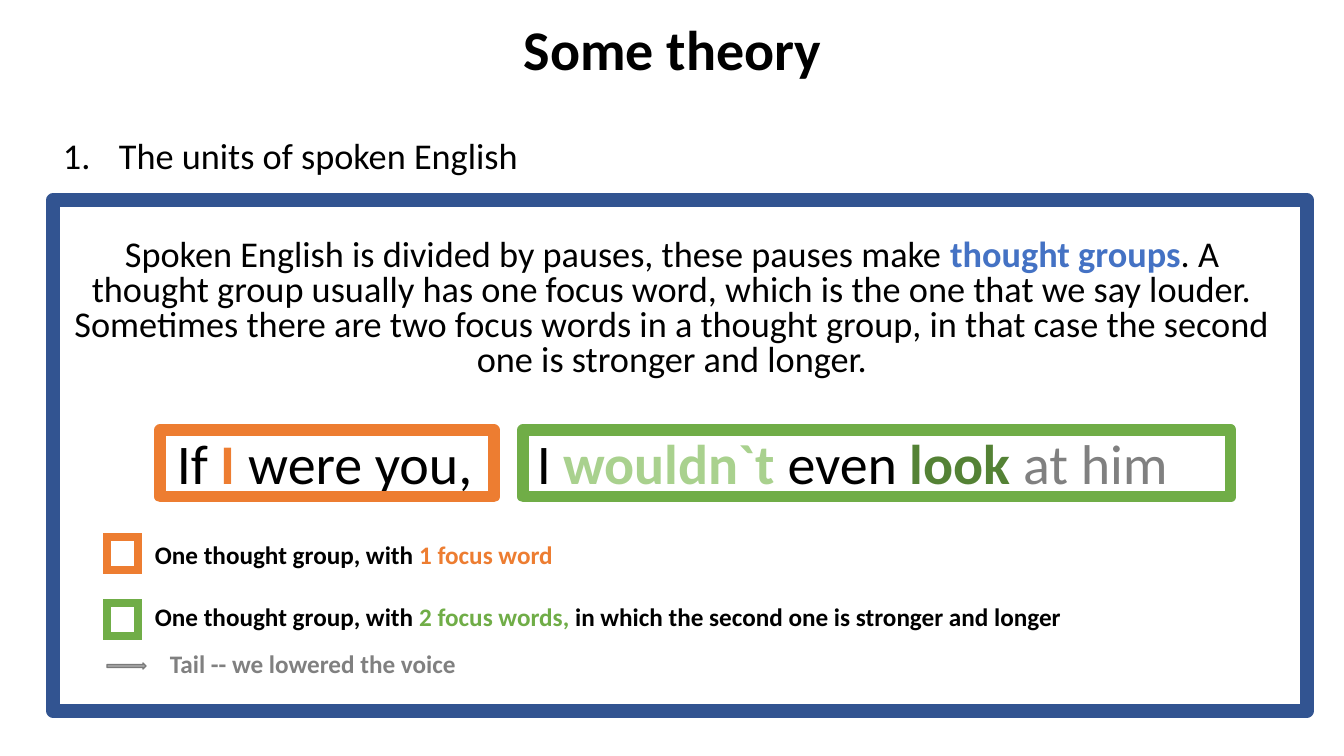
import pptx
import pptx.util
import pptx.dml.color
import pptx.enum.shapes
import pptx.enum.text
import pptx.oxml.ns
import lxml.etree

BLACK, BLUE, ORANGE, GREEN, GREY = "000000", "4472C4", "ED7D31", "70AD47", "808080"
FONT = "Calibri"

TITLE = [("Some theory", BLACK, True)]
HEAD = [("The units of spoken English", BLACK, False)]
THEORY = [
    ("Spoken English is divided by pauses, these pauses make ", BLACK, False),
    ("thought groups", BLUE, True),
    (". A thought group usually has one focus word, which is the one that we say louder. "
     "Sometimes there are two focus words in a thought group, in that case the second one "
     "is stronger and longer.", BLACK, False),
]
IF_PART = [("If ", BLACK, False), ("I", ORANGE, True), (" were you,", BLACK, False)]
MAIN_PART = [
    ("I ", BLACK, False), ("wouldn`t", "A9D18E", True), (" even ", BLACK, False),
    ("look ", "548235", True), ("at him", GREY, False),
]
ONE = [("One thought group, with ", BLACK, True), ("1 focus word", ORANGE, True)]
TWO = [
    ("One thought group, with ", BLACK, True), ("2 focus words, ", GREEN, True),
    ("in which the second one is stronger and longer", BLACK, True),
]
TAIL = [("Tail -- we lowered the voice", GREY, True)]

LABELS = [
    ((167, 424, 340, 78), IF_PART, 40),
    ((527, 424, 690, 78), MAIN_PART, 40),
    ((145, 534, 491, 40), ONE, 18),
    ((145, 596, 931, 40), TWO, 18),
    ((160, 643, 315, 40), TAIL, 18),
]
FRAMES = [
    ((53, 200, 1254, 511), "325491", 9.5, "round"),
    ((160, 430, 334, 67), ORANGE, 8, "round"),
    ((523, 430, 708, 67), GREEN, 8, "round"),
    ((107, 537, 31, 33), ORANGE, 6, "miter"),
    ((107, 603, 31, 33), GREEN, 6, "miter"),
]
ARROW = (107, 663, 39, 6)

SCALE = 914400 / 100.8
KIND = pptx.enum.shapes.MSO_SHAPE
ALIGN = pptx.enum.text.PP_ALIGN
ANCHOR = pptx.enum.text.MSO_ANCHOR


def px(num):
    return pptx.util.Emu(round(num * SCALE))


def color(code):
    return pptx.dml.color.RGBColor.from_string(code)


def write(para, runs, size):
    for text, code, bold in runs:
        run = para.add_run()
        run.text = text
        run.font.name = FONT
        run.font.size = pptx.util.Pt(size)
        run.font.bold = bold
        run.font.color.rgb = color(code)


def add_text(slide, area):
    frame = slide.shapes.add_textbox(*map(px, area)).text_frame
    frame.word_wrap = True
    return frame


def add_shape(slide, kind, area, line, width):
    shape = slide.shapes.add_shape(kind, *map(px, area))
    shape.shadow.inherit = False
    shape.fill.background()
    shape.line.color.rgb = color(line)
    shape.line.width = pptx.util.Pt(width)
    return shape


def add_title(slide):
    title = slide.shapes.title
    title.left, title.top, title.width, title.height = map(px, (93, 0, 1159, 105))
    title.text_frame.vertical_anchor = ANCHOR.MIDDLE
    para = title.text_frame.paragraphs[0]
    para.alignment = ALIGN.CENTER
    para.line_spacing = 0.9
    write(para, TITLE, 40)


def add_body(slide):
    frame = add_text(slide, (53, 137, 1238, 262))
    head, theory = frame.paragraphs[0], frame.add_paragraph()
    for para, runs, gap in ((head, HEAD, 10), (theory, THEORY, 45)):
        para.line_spacing = 0.8
        para.space_before = pptx.util.Pt(gap)
        write(para, runs, 25.9)
    theory.alignment = ALIGN.CENTER
    props = head._p.get_or_add_pPr()
    props.set("marL", str(px(56)))
    props.set("indent", str(px(-56)))
    tag = pptx.oxml.ns.qn("a:buAutoNum")
    lxml.etree.SubElement(props, tag).set("type", "arabicPeriod")


def main():
    deck = pptx.Presentation()
    deck.slide_width, deck.slide_height = px(1344), px(756)
    slide = deck.slides.add_slide(deck.slide_layouts[5])
    add_title(slide)
    add_body(slide)
    for area, runs, size in LABELS:
        write(add_text(slide, area).paragraphs[0], runs, size)
    for area, line, width, join in FRAMES:
        shape = add_shape(slide, KIND.RECTANGLE, area, line, width)
        tag = pptx.oxml.ns.qn("a:" + join)
        lxml.etree.SubElement(shape.line._get_or_add_ln(), tag)
    arrow = add_shape(slide, KIND.RIGHT_ARROW, ARROW, "7A7A7A", 1)
    arrow.fill.solid()
    arrow.fill.fore_color.rgb = color("A5A5A5")
    deck.save("out.pptx")


if __name__ == "__main__":
    main()
